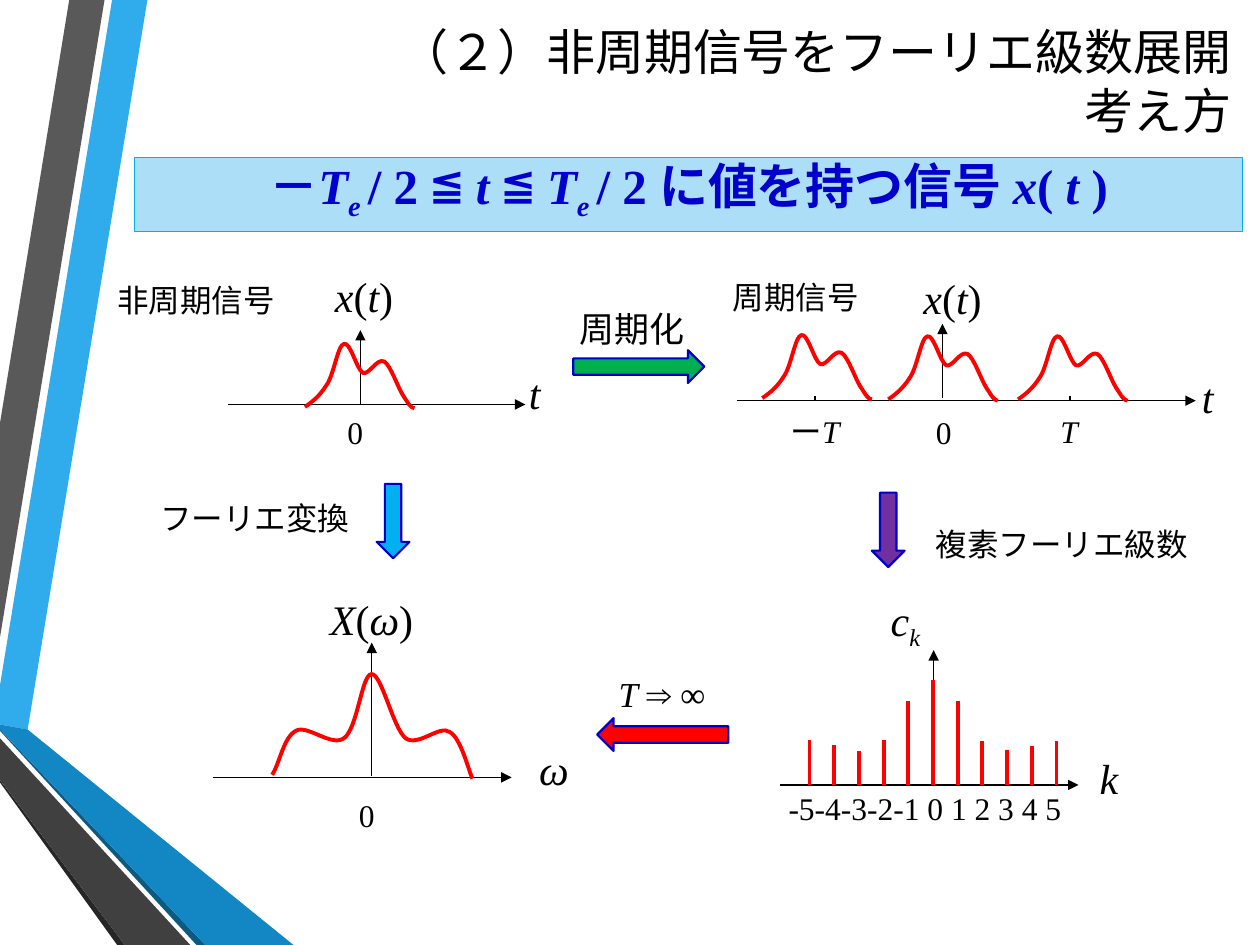
from dataclasses import dataclass

from lxml import etree
from pptx import Presentation
from pptx import util as u
from pptx.dml.color import RGBColor
from pptx.enum import shapes, text
from pptx.oxml.ns import qn

COLUMNS, ROWS = 100, 75
COLORS = {
    "black": "000000", "blue": "0000CC", "red": "FF0000", "green": "00B050",
    "sky": "00B0F0", "purple": "7030A0", "banner": "ACDEF7",
    "band": "30ACEC", "gray": "595959", "shade": "262626",
    "deep": "0C5A82", "ocean": "1287C3", "dark": "404040",
}
SERIF = "Times New Roman"
Runs = list[tuple[str, str]]
Point = tuple[float, float]

deck = Presentation()
deck.slide_width, deck.slide_height = u.Inches(10), u.Inches(7.5)
slide = deck.slides.add_slide(deck.slide_layouts[6])
canvas = slide.shapes


@dataclass
class Box:
    col: float
    row: float
    cols: float
    rows: float

    def emu(self) -> tuple[int, int, int, int]:
        return x(self.col), y(self.row), x(self.cols), y(self.rows)


@dataclass
class Label:
    box: Box
    runs: Runs
    size: float = 18
    align: str = "LEFT"
    inset: bool = True


@dataclass
class Arrow:
    box: Box
    preset: str
    fill: str


@dataclass
class Axis:
    start: Point
    end: Point


@dataclass
class Facet:
    color: str
    corners: list[Point]


def x(cols: float) -> int:
    return round(cols * deck.slide_width / COLUMNS)


def y(rows: float) -> int:
    return round(rows * deck.slide_height / ROWS)


def color(name: str) -> RGBColor:
    return RGBColor.from_string(COLORS[name])


def outline(points: list[Point], close: bool):
    first, *rest = [(x(a), y(b)) for a, b in points]
    builder = canvas.build_freeform(*first)
    builder.add_line_segments(rest, close=close)
    drawn = builder.convert_to_shape()
    drawn.shadow.inherit = False
    return drawn


def draw_facet(facet: Facet) -> None:
    drawn = outline(facet.corners, True)
    drawn.fill.solid()
    drawn.fill.fore_color.rgb = color(facet.color)
    drawn.line.fill.background()


def draw_curve(points: list[Point], origin: Point = (0, 0)) -> None:
    drawn = outline([(a + origin[0], b + origin[1]) for a, b in points], False)
    drawn.fill.background()
    drawn.line.color.rgb = color("red")
    drawn.line.width = u.Pt(2.25)
    route = next(drawn._element.iter(qn("a:path")))
    segments = route.findall(qn("a:lnTo"))
    for i in range(0, len(segments), 3):
        bezier = etree.SubElement(route, qn("a:cubicBezTo"))
        for segment in segments[i:i + 3]:
            bezier.append(segment[0])
            route.remove(segment)


def draw_line(start: Point, end: Point, ink: str = "black",
              width: float = 0.75, arrow: bool = False) -> None:
    line = canvas.add_connector(shapes.MSO_CONNECTOR.STRAIGHT,
                                x(start[0]), y(start[1]), x(end[0]), y(end[1]))
    line.line.color.rgb = color(ink)
    line.line.width = u.Pt(width)
    if arrow:
        etree.SubElement(line.line._get_or_add_ln(), qn("a:tailEnd"), type="triangle")
    etree.SubElement(line._element.spPr, qn("a:effectLst"))


def draw_arrow(arrow: Arrow) -> None:
    drawn = canvas.add_shape(getattr(shapes.MSO_SHAPE, arrow.preset), *arrow.box.emu())
    drawn.shadow.inherit = False
    drawn.fill.solid()
    drawn.fill.fore_color.rgb = color(arrow.fill)
    drawn.line.color.rgb = color("blue")
    drawn.line.width = u.Pt(1.25)


def write(frame, runs: Runs, size: float, align: str, ink: str = "black",
          font: str = SERIF, spacing: float | None = 26, bold: bool = False) -> None:
    frame.word_wrap = True
    paragraph = frame.paragraphs[0]
    paragraph.alignment = getattr(text.PP_ALIGN, align)
    if spacing:
        paragraph.line_spacing = u.Pt(spacing)
        paragraph.space_before = paragraph.space_after = u.Pt(6)
    paragraph.font.name, paragraph.font.size = font, u.Pt(size)
    paragraph.font.bold = bold
    paragraph.font.color.rgb = color(ink)
    for words, style in runs:
        if words == "\n":
            paragraph.add_line_break()
            continue
        run = paragraph.add_run()
        run.text = words
        if style:
            run.font.italic = True
        if style == "sub":
            run.font._element.set("baseline", "-25000")


def draw_label(label: Label) -> None:
    frame = canvas.add_textbox(*label.box.emu()).text_frame
    if not label.inset:
        frame.margin_left = frame.margin_right = frame.margin_top = frame.margin_bottom = 0
    write(frame, label.runs, label.size, label.align)


def function_of(name: str, variable: str) -> Runs:
    return [(name, "it"), ("(", ""), (variable, "it"), (")", "")]


FACETS = [
    Facet("band", [(0, 54.4), (0, 57.5), (2.2, 57.9), (11.7, 0), (8.9, 0)]),
    Facet("gray", [(8.3, 0), (5.5, 0), (0, 33.6), (0, 50.6)]),
    Facet("shade", [(0, 61.9), (0, 62.1), (9.3, 75), (9.9, 75)]),
    Facet("deep", [(0, 57.9), (0, 58), (15.6, 75), (16.3, 75)]),
    Facet("ocean", [(0, 57.9), (16.3, 75), (23.3, 75), (2.2, 57.9), (0, 57.5)]),
    Facet("dark", [(0, 61.9), (9.9, 75), (15.1, 75), (0, 58.6)]),
]
AXES = [
    Axis((18.1, 32.1), (41.7, 32.1)), Axis((28.6, 32.1), (28.6, 26.2)),
    Axis((58.5, 31.8), (94.9, 31.8)), Axis((74.8, 31.6), (74.8, 25.7)),
    Axis((16.9, 61.7), (40.6, 61.7)), Axis((29.5, 61.6), (29.5, 51)),
    Axis((61.9, 62.3), (85.6, 62.3)), Axis((74.1, 62.3), (74.1, 51.6)),
]
PULSE = [
    (0, 0), (0.6, -0.4), (1.2, -0.9), (1.7, -1.7), (2.3, -2.5), (2.6, -4.9), (3.1, -5),
    (3.6, -5.2), (4.1, -3), (4.6, -2.7), (5.1, -2.5), (5.7, -3.9), (6.3, -3.6),
    (6.8, -3.3), (7.4, -1.5), (7.8, -0.9), (8.2, -0.3), (8.4, 0.1), (8.7, 0.1),
]
PULSE_ORIGINS = [(24.2, 32.3), (60.5, 31.6), (70.5, 31.7), (80.8, 31.7)]
SPECTRUM = [
    (21.6, 61.5), (22.2, 60.6), (22.5, 58.5), (23.5, 58), (24.4, 57.5), (26.3, 59.3),
    (27.3, 58.6), (28.4, 57.8), (28.7, 53.5), (29.5, 53.5), (30.3, 53.5), (31.2, 57.8),
    (32.2, 58.6), (33.2, 59.3), (34.9, 57.5), (35.7, 58.1), (36.6, 58.6), (37.2, 61.2),
    (37.5, 61.8),
]
COEFFICIENT_TOPS = [58.7, 59.1, 59.6, 58.7, 55.6, 54, 55.6, 58.8, 59.5, 59.2, 58.8]
ARROWS = [
    Arrow(Box(45.5, 27.8, 10.4, 2.6), "RIGHT_ARROW", "green"),
    Arrow(Box(47.4, 57, 10.4, 2.6), "LEFT_ARROW", "red"),
    Arrow(Box(29.9, 38.4, 2.6, 5.9), "DOWN_ARROW", "sky"),
    Arrow(Box(69.2, 39.1, 2.6, 5.9), "DOWN_ARROW", "purple"),
]
LABELS = [
    Label(Box(6.6, 21.2, 17.9, 3.8), [("非周期信号", "")], align="CENTER"),
    Label(Box(44.3, 23.6, 11.7, 4.6), [("周期化", "")], 20, "CENTER"),
    Label(Box(46.6, 52.6, 11.2, 4.6), [(" T ", "it"), ("⇒ ∞", "")], 20, "CENTER"),
    Label(Box(55.8, 21, 14.7, 3.8), [("周期信号", "")], align="CENTER"),
    Label(Box(60.7, 32.1, 8, 4.1), [("ー", ""), ("T", "it")], align="CENTER", inset=False),
    Label(Box(82, 32.1, 5.7, 4.1), [("T", "it")], align="CENTER", inset=False),
    Label(Box(25.6, 21.4, 9.9, 4.1), function_of("x", "t"), 24),
    Label(Box(72.3, 21.5, 9.9, 4.1), function_of("x", "t"), 24),
    Label(Box(25.2, 47, 9.9, 4.1), function_of("X", "ω"), 24),
    Label(Box(69.7, 47.6, 9.9, 4.1), [("c", "it"), ("k", "sub")], 24),
    Label(Box(61.6, 61.5, 29.9, 4.1), [("-5-4-3-2-1 0 1 2 3 4 5", "")]),
    Label(Box(73.3, 40.6, 25.3, 3.8), [("複素フーリエ級数", "")]),
    Label(Box(10.7, 38.5, 18, 3.8), [("フーリエ変換", "")], align="RIGHT"),
]
LABELS += [Label(Box(col, row, 4.6, 4.1), [("0", "")])
           for col, row in [(26.6, 31.7), (73.3, 31.7), (27.5, 62.1)]]
LABELS += [Label(Box(col, row, 4.3, 4.1), [(name, "it")], 24)
           for name, col, row in [("t", 41, 29.1), ("t", 94.4, 29.4),
                                  ("ω", 41.8, 58.9), ("k", 86.3, 59.6)]]
BANNER_RUNS = [
    ("－", ""), ("T", "it"), ("e ", "sub"), ("/ 2 ≦ ", ""), ("t ", "it"), ("≦ ", ""),
    ("T", "it"), ("e ", "sub"), ("/ 2 に値を持つ信号 ", ""), ("x", "it"), ("( ", ""),
    ("t ", "it"), (")", ""),
]

for facet in FACETS:
    draw_facet(facet)

title = canvas.add_textbox(*Box(14.4, 0, 84.3, 12.8).emu()).text_frame
title.vertical_anchor = text.MSO_ANCHOR.MIDDLE
write(title, [("（２）非周期信号をフーリエ級数展開", ""), ("\n", ""), ("考え方", "")],
      28, "RIGHT", font="Cabin", spacing=None)

banner = canvas.add_shape(shapes.MSO_SHAPE.RECTANGLE, *Box(10.7, 12.5, 87.9, 5.9).emu())
banner.shadow.inherit = False
banner.fill.solid()
banner.fill.fore_color.rgb = color("banner")
banner.line.color.rgb = color("sky")
banner.line.width = u.Pt(0.75)
banner.text_frame.vertical_anchor = text.MSO_ANCHOR.TOP
write(banner.text_frame, BANNER_RUNS, 28, "CENTER", "blue", spacing=33.6, bold=True)

for axis in AXES:
    draw_line(axis.start, axis.end, arrow=True)
for tick in (64.7, 84.9):
    draw_line((tick, 31.4), (tick, 31.8), width=1)
for origin in PULSE_ORIGINS:
    draw_curve(PULSE, origin)
draw_curve(SPECTRUM)
for k, top in enumerate(COEFFICIENT_TOPS, -5):
    stem = 74.05 + 1.96 * k
    draw_line((stem, top), (stem, 62.3), "red", 2.25)
for arrow in ARROWS:
    draw_arrow(arrow)
for label in LABELS:
    draw_label(label)

deck.save("out.pptx")
